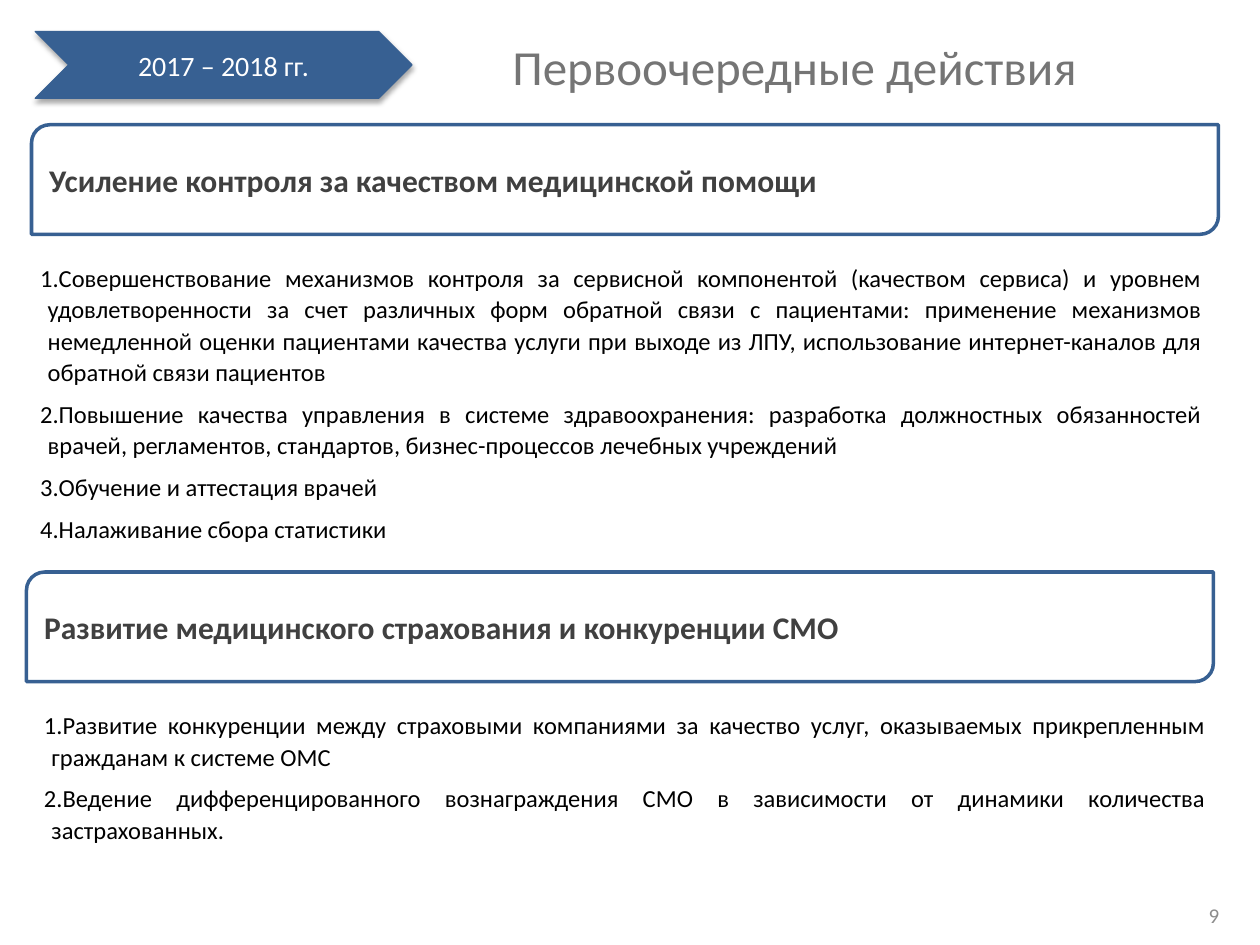
"""Build a slide of priority actions for 2017–2018."""
from dataclasses import dataclass

import lxml.etree
import pptx
import pptx.dml.color
import pptx.enum.shapes
import pptx.enum.text
import pptx.oxml.ns
import pptx.util

COLS, ROWS = 100, 75
ALIGN = pptx.enum.text.PP_ALIGN
ANCHOR = pptx.enum.text.MSO_ANCHOR
SHAPE = pptx.enum.shapes.MSO_SHAPE
BLUE, WHITE = "376092", "FFFFFF"
PANEL_W, PANEL_H = 94.2, 8.7

TITLE = {"size": pptx.util.Pt(28)}
PERIOD = {"size": pptx.util.Pt(16)}
HEADING = {"size": pptx.util.Pt(18), "bold": True}
ITEM = {"size": pptx.util.Pt(14)}
NUMBER = {"size": pptx.util.Pt(12)}
CENTRED = {"alignment": ALIGN.CENTER}
LEFT = {"alignment": ALIGN.LEFT}
LISTED = {
    "alignment": ALIGN.JUSTIFY,
    "level": 1,
    "line_spacing": 1.07,
    "space_after": pptx.util.Pt(6),
}


@dataclass
class Box:
    """Place on the slide in grid columns and rows."""

    col: float
    row: float
    cols: float
    rows: float


@dataclass
class Section:
    """Framed heading with its numbered list."""

    heading: str
    frame: Box
    body: Box
    items: list[str]


SECTIONS = [
    Section(
        "Усиление контроля за качеством медицинской помощи",
        Box(2.5, 9.9, PANEL_W, PANEL_H),
        Box(2.2, 20.2, PANEL_W, 23.7),
        [
            "Совершенствование механизмов контроля за сервисной компонентой "
            "(качеством сервиса) и уровнем удовлетворенности за счет различных "
            "форм обратной связи с пациентами: применение механизмов немедленной "
            "оценки пациентами качества услуги при выходе из ЛПУ, использование "
            "интернет-каналов для обратной связи пациентов",
            "Повышение качества управления в системе здравоохранения: разработка "
            "должностных обязанностей врачей, регламентов, стандартов, "
            "бизнес-процессов лечебных учреждений",
            "Обучение и аттестация врачей",
            "Налаживание сбора статистики",
        ],
    ),
    Section(
        "Развитие медицинского страхования и конкуренции СМО",
        Box(2.1, 45.4, PANEL_W, PANEL_H),
        Box(2.5, 55.7, PANEL_W, 11.9),
        [
            "Развитие конкуренции между страховыми компаниями за качество услуг, "
            "оказываемых прикрепленным гражданам к системе ОМС",
            "Ведение дифференцированного вознаграждения СМО в зависимости от "
            "динамики количества застрахованных.",
        ],
    ),
]


def rgb(value: str) -> pptx.dml.color.RGBColor:
    """Return the colour for a hex string."""
    return pptx.dml.color.RGBColor.from_string(value)


def place(prs, box: Box) -> tuple[int, int, int, int]:
    """Convert grid units to slide lengths."""
    w, h = prs.slide_width / COLS, prs.slide_height / ROWS
    return round(box.col * w), round(box.row * h), round(box.cols * w), round(box.rows * h)


def sub(parent, tag: str, **attrs):
    """Append a drawing element with attributes."""
    return lxml.etree.SubElement(
        parent, pptx.oxml.ns.qn(tag), {k: str(v) for k, v in attrs.items()}
    )


def write(sp, texts: list[str], font: dict, para: dict, colour: str, anchor=ANCHOR.MIDDLE) -> None:
    """Write formatted paragraphs into a shape."""
    tf = sp.text_frame
    tf.word_wrap = True
    tf.vertical_anchor = anchor
    for i, text in enumerate(texts):
        p = tf.add_paragraph() if i else tf.paragraphs[0]
        for name, value in para.items():
            setattr(p, name, value)
        r = p.add_run()
        r.text = text
        r.font.name = "Calibri"
        r.font.color.rgb = rgb(colour)
        for name, value in font.items():
            setattr(r.font, name, value)


def add_text(prs, s, box: Box, *args):
    """Add a text box."""
    sp = s.shapes.add_textbox(*place(prs, box))
    write(sp, *args)
    return sp


def add_panel(prs, s, kind, box: Box, fill: str, line: float, *args):
    """Add a filled, blue-outlined shape with text."""
    sp = s.shapes.add_shape(kind, *place(prs, box))
    sp.shadow.inherit = False
    sp.fill.solid()
    sp.fill.fore_color.rgb = rgb(fill)
    sp.line.color.rgb = rgb(BLUE)
    sp.line.width = pptx.util.Pt(line)
    write(sp, *args)
    return sp


def drop_shadow(sp) -> None:
    """Cast a soft shadow straight down."""
    effects = sp._element.spPr.find(pptx.oxml.ns.qn("a:effectLst"))
    shadow = sub(
        effects, "a:outerShdw", blurRad=pptx.util.Pt(3.1), dist=pptx.util.Pt(1.8),
        dir=90 * 60000, rotWithShape=0,
    )
    sub(sub(shadow, "a:srgbClr", val="000000"), "a:alpha", val=35000)


def number_items(sp) -> None:
    """Number the paragraphs of a text box."""
    for p in sp.text_frame.paragraphs:
        ppr = p._p.get_or_add_pPr()
        ppr.set("marL", str(pptx.util.Inches(0.06)))
        ppr.set("indent", str(pptx.util.Inches(-0.38)))
        sub(ppr, "a:buFont", typeface="+mj-lt")
        sub(ppr, "a:buAutoNum", type="arabicPeriod")


def add_section(prs, s, section: Section) -> None:
    """Add a framed heading and its list."""
    add_panel(prs, s, SHAPE.ROUND_2_DIAG_RECTANGLE, section.frame, WHITE, 2,
              [section.heading], HEADING, LEFT, "404040")
    sp = add_text(prs, s, section.body, section.items, ITEM, LISTED, "000000", ANCHOR.TOP)
    sp.text_frame.auto_size = pptx.enum.text.MSO_AUTO_SIZE.SHAPE_TO_FIT_TEXT
    number_items(sp)


def main() -> None:
    """Build and save the slide."""
    prs = pptx.Presentation()
    prs.slide_width, prs.slide_height = pptx.util.Inches(10), pptx.util.Inches(7.5)
    s = prs.slides.add_slide(prs.slide_layouts[6])
    add_text(prs, s, Box(34.3, 1.4, 57.5, 7.6), ["Первоочередные действия"],
             TITLE, CENTRED, "757575")
    period = add_panel(prs, s, SHAPE.CHEVRON, Box(2.8, 2.5, 29.9, 5.3), BLUE, 0.75,
                       ["2017 – 2018 гг."], PERIOD, CENTRED, WHITE)
    drop_shadow(period)
    for section in SECTIONS:
        add_section(prs, s, section)
    add_text(prs, s, Box(93.8, 70.6, 5.1, 4), ["9"], NUMBER, CENTRED, "8C8C8C")
    prs.save("out.pptx")


if __name__ == "__main__":
    main()
